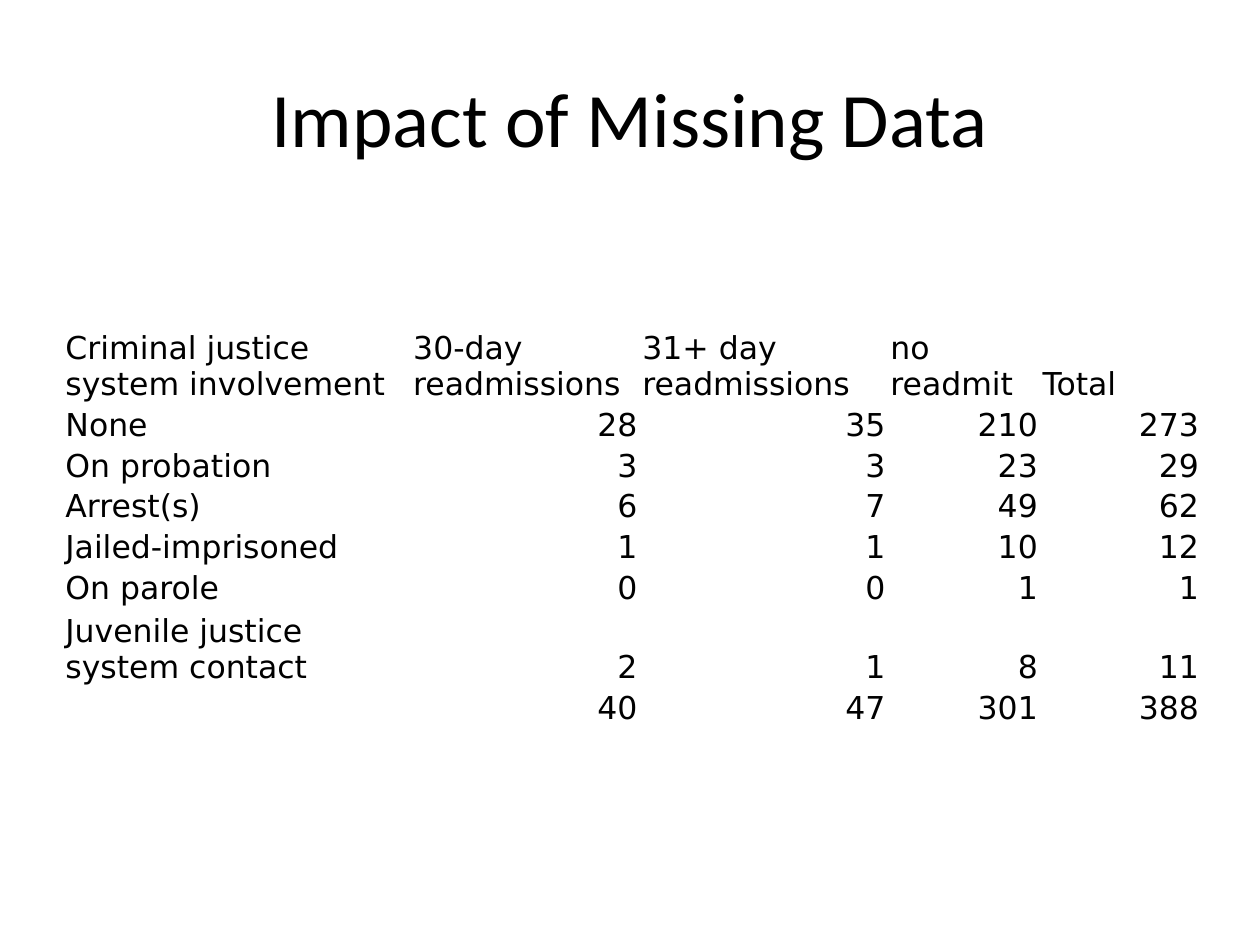
from dataclasses import dataclass

from pptx import Presentation
from pptx.dml.color import RGBColor
from pptx.enum import text
from pptx.util import Cm, Pt

COLOURS = {"text": "000000"}
TITLE_FONT = "Calibri"
TABLE_FONT = "DejaVu Sans"
COLUMN_WIDTHS = (7.01, 4.62, 5.0, 3.07, 3.25)
HEADINGS = (
    "Criminal justice system involvement",
    "30-day readmissions",
    "31+ day readmissions",
    "no readmit",
    "Total",
)


@dataclass(frozen=True)
class Involvement:
    label: str
    counts: tuple[int, ...]
    height: float = 0.82


INVOLVEMENTS = (
    Involvement("None", (28, 35, 210, 273)),
    Involvement("On probation", (3, 3, 23, 29)),
    Involvement("Arrest(s)", (6, 7, 49, 62)),
    Involvement("Jailed-imprisoned", (1, 1, 10, 12)),
    Involvement("On parole", (0, 0, 1, 1)),
    Involvement("Juvenile justice system contact", (2, 1, 8, 11), 1.6),
    Involvement("", (40, 47, 301, 388)),
)
HEADING_HEIGHT = 2.36


def add_span(para, words: str, font_name: str, size: float) -> None:
    span = para.add_run()
    span.text = words
    span.font.name = font_name
    span.font.size = Pt(size)
    span.font.bold = False
    span.font.color.rgb = RGBColor.from_string(COLOURS["text"])


def write_title(page, words: str) -> None:
    box = page.shapes.title
    box.left, box.top, box.width, box.height = Cm(1.27), Cm(0.76), Cm(22.86), Cm(3.18)
    box.text_frame.vertical_anchor = text.MSO_ANCHOR.MIDDLE
    para = box.text_frame.paragraphs[0]
    para.alignment = text.PP_ALIGN.CENTER
    add_span(para, words, TITLE_FONT, 44)


def write_cell(cell, words: str, alignment: text.PP_ALIGN) -> None:
    cell.fill.background()
    cell.vertical_anchor = text.MSO_ANCHOR.BOTTOM
    cell.margin_left = cell.margin_right = cell.margin_top = Cm(0.05)
    cell.margin_bottom = 0
    para = cell.text_frame.paragraphs[0]
    para.alignment = alignment
    if words:
        add_span(para, words, TABLE_FONT, 18)


def add_readmission_table(page) -> None:
    heights = (HEADING_HEIGHT, *(item.height for item in INVOLVEMENTS))
    frame = page.shapes.add_table(
        len(heights), len(COLUMN_WIDTHS),
        Cm(1.27), Cm(5.77), Cm(sum(COLUMN_WIDTHS)), Cm(sum(heights)),
    )
    table = frame.table
    table.first_row = table.horz_banding = False
    for column, width in zip(table.columns, COLUMN_WIDTHS):
        column.width = Cm(width)
    for row, height in zip(table.rows, heights):
        row.height = Cm(height)

    for column, heading in enumerate(HEADINGS):
        write_cell(table.cell(0, column), heading, text.PP_ALIGN.LEFT)
    for row, item in enumerate(INVOLVEMENTS, start=1):
        write_cell(table.cell(row, 0), item.label, text.PP_ALIGN.LEFT)
        for column, count in enumerate(item.counts, start=1):
            write_cell(table.cell(row, column), str(count), text.PP_ALIGN.RIGHT)


def main() -> None:
    deck = Presentation()
    deck.slide_width, deck.slide_height = Cm(25.4), Cm(19.05)
    title_only = deck.slide_layouts[5]
    page = deck.slides.add_slide(title_only)
    write_title(page, "Impact of Missing Data")
    add_readmission_table(page)
    deck.save("out.pptx")


if __name__ == "__main__":
    main()
